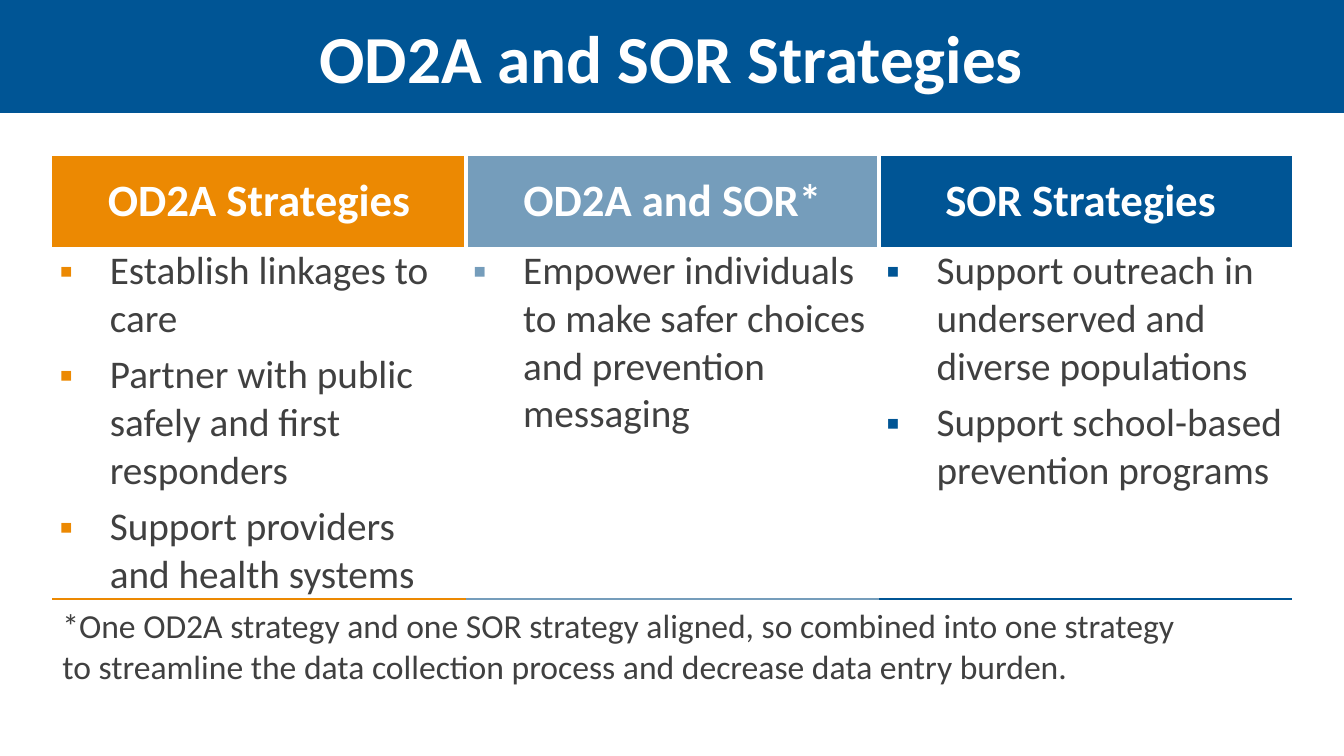
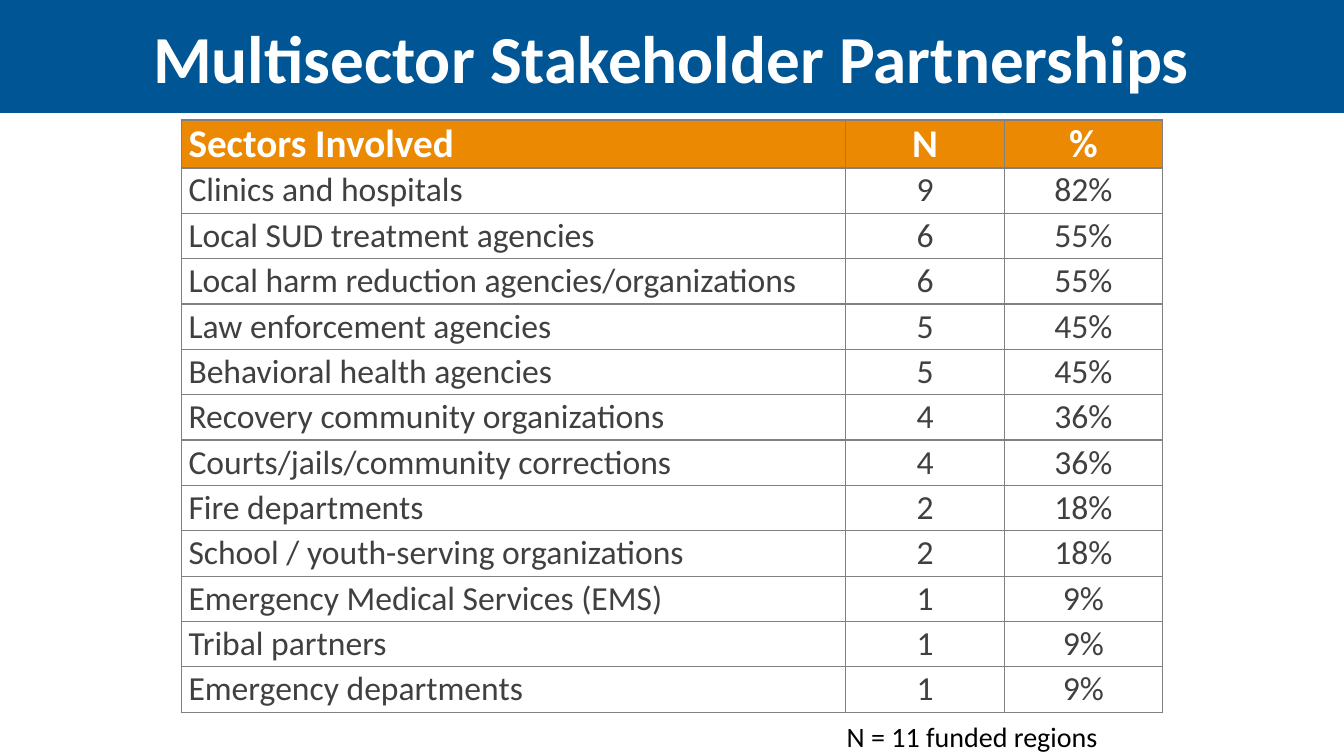
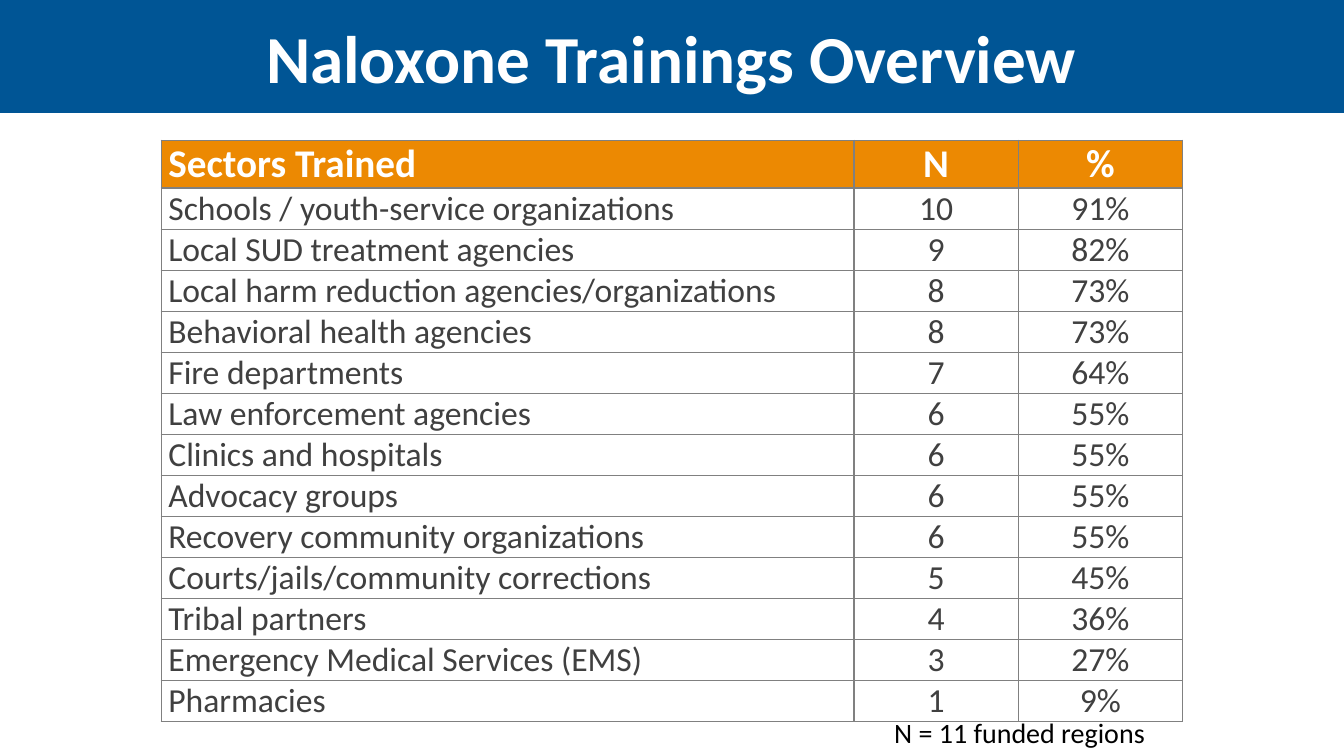
"""Builds three slides on overdose prevention strategies, partners and trainings."""
from lxml import etree
from pptx import Presentation
from pptx.dml.color import RGBColor
from pptx.enum.shapes import MSO_SHAPE
from pptx.enum.text import MSO_ANCHOR, MSO_AUTO_SIZE, PP_ALIGN
from pptx.oxml.ns import qn
from pptx.util import Inches, Pt

RECT = MSO_SHAPE.RECTANGLE
MIDDLE, TOP = MSO_ANCHOR.MIDDLE, MSO_ANCHOR.TOP
LEFT, CENTER = PP_ALIGN.LEFT, PP_ALIGN.CENTER
NO_FIT = MSO_AUTO_SIZE.NONE

FONT = "Calibri"
COLORS = {"blue": "005595", "orange": "EC8902", "steel": "759DBB", "text": "404040",
          "grid": "808080", "white": "FFFFFF", "black": "000000"}
NO_STYLE = "{2D5ABB26-0587-4C30-8999-92F81FD0307C}"
WIDTH, HEIGHT, BAND = 13.33, 7.5, 1.12

STRATEGIES = {
    "title": "OD2A and SOR Strategies",
    "columns": [
        ("OD2A Strategies", "orange", [
            "Establish linkages to care",
            "Partner with public safely and first responders",
            "Support providers and health systems"]),
        ("OD2A and SOR*", "steel", [
            "Empower individuals to make safer choices and prevention messaging"]),
        ("SOR Strategies ", "blue", [
            "Support outreach in underserved and diverse populations",
            "Support school-based prevention programs"]),
    ],
    "note": "*One OD2A strategy and one SOR strategy aligned, so combined into one strategy "
            "to streamline the data collection process and decrease data entry burden.",
}

REGIONS = "N = 11 funded regions"
SECTOR_SLIDES = [
    {"title": "Multisector Stakeholder Partnerships",
     "header": ("Sectors Involved", "N", "%"),
     "rows": [
         ("Clinics and hospitals", "9", "82%"),
         ("Local SUD treatment agencies", "6", "55%"),
         ("Local harm reduction agencies/organizations", "6", "55%"),
         ("Law enforcement agencies", "5", "45%"),
         ("Behavioral health agencies", "5", "45%"),
         ("Recovery community organizations", "4", "36%"),
         ("Courts/jails/community corrections", "4", "36%"),
         ("Fire departments", "2", "18%"),
         ("School / youth-serving organizations", "2", "18%"),
         ("Emergency Medical Services (EMS)", "1", "9%"),
         ("Tribal partners", "1", "9%"),
         ("Emergency departments", "1", "9%")],
     "top": 1.19, "cols": (6.59, 1.57, 1.57), "row": 0.45,
     "note_at": (8.3, 7.09, 3.53, 0.44)},
    {"title": "Naloxone Trainings Overview",
     "header": ("Sectors Trained", "N", "%"),
     "rows": [
         ("Schools / youth-service organizations", "10", "91%"),
         ("Local SUD treatment agencies", "9", "82%"),
         ("Local harm reduction agencies/organizations", "8", "73%"),
         ("Behavioral health agencies", "8", "73%"),
         ("Fire departments", "7", "64%"),
         ("Law enforcement agencies", "6", "55%"),
         ("Clinics and hospitals", "6", "55%"),
         ("Advocacy groups", "6", "55%"),
         ("Recovery community organizations", "6", "55%"),
         ("Courts/jails/community corrections", "5", "45%"),
         ("Tribal partners", "4", "36%"),
         ("Emergency Medical Services (EMS)", "3", "27%"),
         ("Pharmacies", "1", "9%")],
     "top": 1.39, "cols": (6.87, 1.63, 1.63), "row": 0.4,
     "note_at": (8.77, 7.05, 3.17, 0.44)},
]


def rgb(name):
    return RGBColor.from_string(COLORS[name])


def write(tf, texts, size, color, bold=False, align=LEFT, space=0):
    for i, text in enumerate(texts):
        p = tf.add_paragraph() if i else tf.paragraphs[0]
        p.alignment = align
        p.space_before = p.space_after = Pt(space)
        r = p.add_run()
        r.text = text
        r.font.name, r.font.size, r.font.bold = FONT, Pt(size), bold
        r.font.color.rgb = rgb(color)


def add_bullet(p, color):
    pPr = p._p.get_or_add_pPr()
    pPr.set("marL", str(Inches(0.5)))
    pPr.set("indent", str(-Inches(0.5)))
    clr = etree.SubElement(pPr, qn("a:buClr"))
    etree.SubElement(clr, qn("a:srgbClr"), val=COLORS[color])
    etree.SubElement(pPr, qn("a:buFont"), typeface="Arial")
    etree.SubElement(pPr, qn("a:buChar"), char="▪")


def set_borders(cell, sides, color, width):
    tcPr = cell._tc.get_or_add_tcPr()
    for i, side in enumerate(sides):
        ln = etree.Element(qn(f"a:ln{side}"), w=str(Pt(width)))
        fill = etree.SubElement(ln, qn("a:solidFill"))
        etree.SubElement(fill, qn("a:srgbClr"), val=COLORS[color])
        tcPr.insert(i, ln)


def format_cell(cell, texts, size, color, fill=None, anchor=MIDDLE, **style):
    cell.margin_left = cell.margin_right = Inches(0.07)
    cell.margin_top = cell.margin_bottom = 0
    cell.vertical_anchor = anchor
    if fill:
        cell.fill.solid()
        cell.fill.fore_color.rgb = rgb(fill)
    else:
        cell.fill.background()
    write(cell.text_frame, texts, size, color, **style)


def add_table(s, left, top, cols, rows):
    frame = s.shapes.add_table(len(rows), len(cols), Inches(left), Inches(top),
                               Inches(sum(cols)), Inches(sum(rows)))
    for style in frame.element.iter(qn("a:tableStyleId")):
        style.text = NO_STYLE
    table = frame.table
    table.horz_banding = False
    for col, width in zip(table.columns, cols):
        col.width = Inches(width)
    for row, height in zip(table.rows, rows):
        row.height = Inches(height)
    return table


def add_note(s, at, text, size, color, anchor=TOP):
    tf = s.shapes.add_textbox(*map(Inches, at)).text_frame
    tf.word_wrap = True
    tf.vertical_anchor = anchor
    write(tf, [text], size, color)


def add_slide(prs, title):
    s = prs.slides.add_slide(prs.slide_layouts[5])
    band = s.shapes.add_shape(RECT, 0, 0, prs.slide_width, Inches(BAND))
    band.shadow.inherit = False
    band.fill.solid()
    band.fill.fore_color.rgb = rgb("blue")
    band.line.fill.background()
    sp = s.shapes.title
    band.element.addnext(sp.element)
    sp.left, sp.top, sp.width, sp.height = map(Inches, (0.3, 0.01, 12.72, 1.11))
    tf = sp.text_frame
    tf.auto_size, tf.word_wrap, tf.vertical_anchor = NO_FIT, True, MIDDLE
    write(tf, [title], 48, "white", bold=True, align=CENTER)
    return s


def add_strategies(prs, data):
    s = add_slide(prs, data["title"])
    columns = data["columns"]
    table = add_table(s, 0.52, 1.55, [4.1] * len(columns), (0.9, 3.49))
    for c, (heading, color, items) in enumerate(columns):
        head, body = table.cell(0, c), table.cell(1, c)
        format_cell(head, [heading], 32, "white", color, bold=True, align=CENTER, space=6)
        sides = ("L" if c else "") + ("R" if c < len(columns) - 1 else "")
        set_borders(head, sides, "white", 3)
        format_cell(body, items, 28, "text", anchor=TOP, space=3)
        set_borders(body, "B", color, 2.25)
        for p in body.text_frame.paragraphs:
            add_bullet(p, color)
    add_note(s, (0.52, 5.95, 11.38, 0.91), data["note"], 24, "text", MIDDLE)


def add_sectors(prs, data):
    s = add_slide(prs, data["title"])
    cols, rows = data["cols"], [data["header"], *data["rows"]]
    heights = [0.47] + [data["row"]] * len(data["rows"])
    table = add_table(s, (WIDTH - sum(cols)) / 2, data["top"], cols, heights)
    for i, row in enumerate(rows):
        look = (dict(size=24, color="text", space=3) if i else
                dict(size=28, color="white", fill="orange", bold=True))
        for c, text in enumerate(row):
            cell = table.cell(i, c)
            format_cell(cell, [text], align=CENTER if c else LEFT, **look)
            set_borders(cell, "LRTB", "grid", 1)
    add_note(s, data["note_at"], REGIONS, 20, "black")


def main():
    prs = Presentation()
    prs.slide_width, prs.slide_height = Inches(WIDTH), Inches(HEIGHT)
    add_strategies(prs, STRATEGIES)
    for data in SECTOR_SLIDES:
        add_sectors(prs, data)
    prs.save("out.pptx")


if __name__ == "__main__":
    main()
